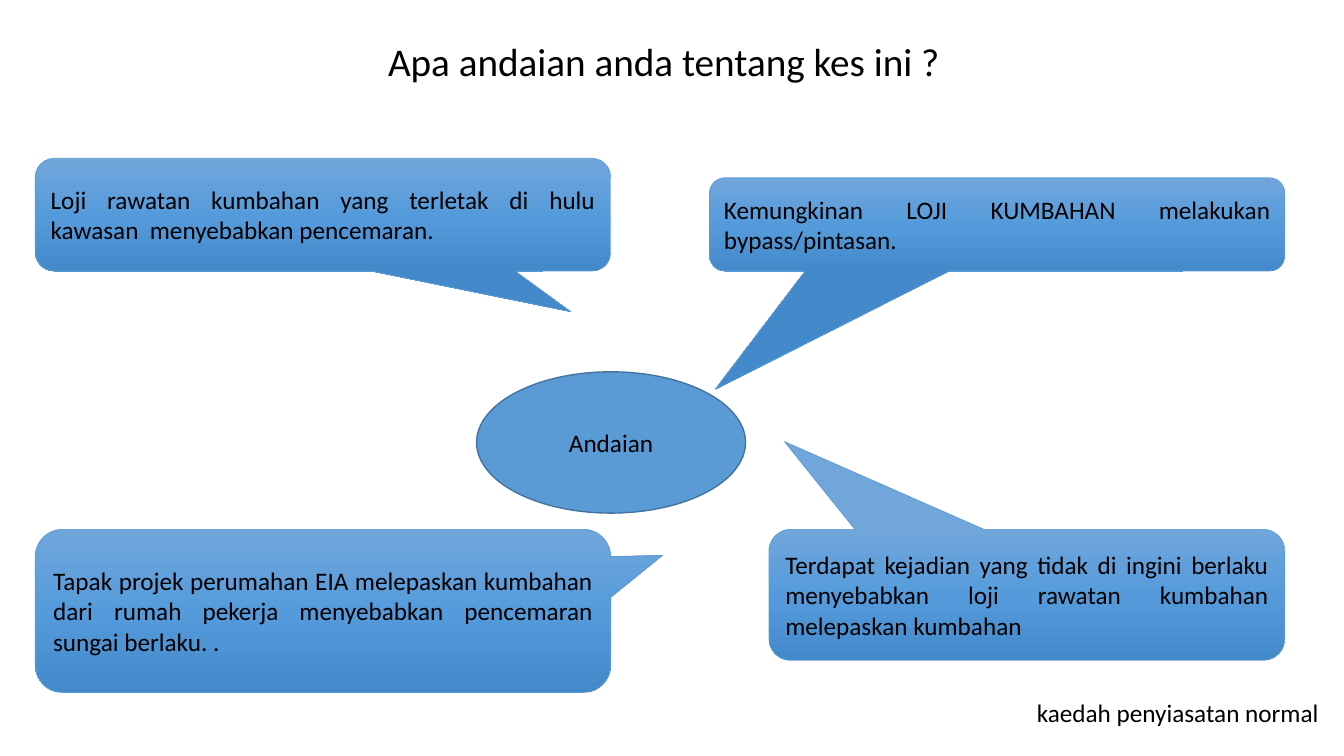
"""Build the slide of assumptions about the pollution case."""
from copy import deepcopy
from dataclasses import dataclass

from pptx import Presentation
from pptx.dml.color import RGBColor
from pptx.enum.shapes import MSO_SHAPE
from pptx.enum.text import MSO_ANCHOR, MSO_AUTO_SIZE, PP_ALIGN
from pptx.oxml.ns import qn
from pptx.shapes.autoshape import Shape
from pptx.slide import Slide
from pptx.util import Cm, Pt

CALLOUT = MSO_SHAPE.ROUNDED_RECTANGULAR_CALLOUT
OVAL = MSO_SHAPE.OVAL
MIDDLE = MSO_ANCHOR.MIDDLE
FIT_SHAPE = MSO_AUTO_SIZE.SHAPE_TO_FIT_TEXT
LEFT, CENTER, JUSTIFY = PP_ALIGN.LEFT, PP_ALIGN.CENTER, PP_ALIGN.JUSTIFY


@dataclass(frozen=True)
class Theme:
    """Colours and type sizes of the slide."""

    font: str = "Calibri"
    ink: str = "000000"
    accent: str = "5B9BD5"
    oval_edge: str = "43739E"
    gradient: tuple[tuple[float, str], ...] = (
        (0, "71A6DB"), (0.5, "559BDB"), (1, "448ACA"))
    title_size: float = 28
    body_size: float = 18


@dataclass(frozen=True)
class Box:
    """Place and size in centimetres."""

    left: float
    top: float
    width: float
    height: float

    def lengths(self) -> tuple[Cm, Cm, Cm, Cm]:
        """Return the four lengths in the order that shapes take them."""
        return Cm(self.left), Cm(self.top), Cm(self.width), Cm(self.height)


@dataclass(frozen=True)
class Assumption:
    """A callout with the offset of its tip from its centre."""

    text: str
    box: Box
    tip: tuple[float, float]


THEME = Theme()
LEFT_EDGE, RIGHT_EDGE, LOWER_TOP, WIDE = 0.89, 32.38, 13.34, 14.5
ASSUMPTIONS = (
    Assumption("Loji rawatan kumbahan yang terletak di hulu kawasan  menyebabkan pencemaran.",
               Box(LEFT_EDGE, 3.99, WIDE, 2.84), (0.43, 0.86)),
    Assumption("Tapak projek perumahan EIA melepaskan kumbahan dari rumah pekerja "
               "menyebabkan pencemaran sungai berlaku. .",
               Box(LEFT_EDGE, LOWER_TOP, WIDE, 4.11), (0.59, -0.34)),
    Assumption("Kemungkinan LOJI KUMBAHAN melakukan bypass/pintasan.",
               Box(RIGHT_EDGE - WIDE, 4.48, WIDE, 2.35), (-0.49, 1.77)),
    Assumption("Terdapat kejadian yang tidak di ingini berlaku menyebabkan loji "
               "rawatan kumbahan melepaskan kumbahan",
               Box(RIGHT_EDGE - 13, LOWER_TOP, 13, 3.3), (-0.47, -1.17)),
)


def write(shape: Shape, text: str, align: PP_ALIGN, size: float = THEME.body_size) -> None:
    """Put one formatted paragraph in a shape."""
    shape.text_frame.text = text
    paragraph = shape.text_frame.paragraphs[0]
    paragraph.alignment = align
    font = paragraph.runs[0].font
    font.name, font.size = THEME.font, Pt(size)
    font.color.rgb = RGBColor.from_string(THEME.ink)


def add_outlined(slide: Slide, kind: MSO_SHAPE, box: Box, edge: str, weight: float) -> Shape:
    """Add a preset shape with an outline, no shadow and centred wrapping text."""
    shape = slide.shapes.add_shape(kind, *box.lengths())
    shape.shadow.inherit = False
    shape.line.color.rgb = RGBColor.from_string(edge)
    shape.line.width = Pt(weight)
    shape.text_frame.word_wrap = True
    shape.text_frame.vertical_anchor = MIDDLE
    return shape


def fill_gradient(shape: Shape) -> None:
    """Fill a shape from top to bottom with the theme gradient."""
    shape.fill.gradient()
    shape.fill.gradient_angle = 270
    stop_list = shape.fill._xPr.find(qn("a:gradFill")).find(qn("a:gsLst"))
    stop_list.insert(1, deepcopy(stop_list[0]))
    for stop, (position, colour) in zip(shape.fill.gradient_stops, THEME.gradient):
        stop.position = position
        stop.color.rgb = RGBColor.from_string(colour)


def add_assumption(slide: Slide, assumption: Assumption) -> None:
    """Add one callout."""
    callout = add_outlined(slide, CALLOUT, assumption.box, THEME.accent, 0.5)
    callout.adjustments[0], callout.adjustments[1] = assumption.tip
    fill_gradient(callout)
    write(callout, assumption.text, JUSTIFY)


def main() -> None:
    """Draw the slide and save it."""
    deck = Presentation()
    deck.slide_width, deck.slide_height = Cm(33.87), Cm(19.05)
    slide = deck.slides.add_slide(deck.slide_layouts[6])

    title = slide.shapes.add_textbox(*Box(8.76, 0.94, 15.93, 1.37).lengths())
    title.text_frame.word_wrap = True
    write(title, "Apa andaian anda tentang kes ini ?", CENTER, THEME.title_size)
    title.text_frame.paragraphs[0].line_spacing = 0.9

    for assumption in ASSUMPTIONS:
        add_assumption(slide, assumption)

    hub = add_outlined(slide, OVAL, Box(12.01, 9.37, 6.78, 3.56), THEME.oval_edge, 1)
    hub.fill.solid()
    hub.fill.fore_color.rgb = RGBColor.from_string(THEME.accent)
    write(hub, "Andaian", CENTER)

    method = slide.shapes.add_textbox(*Box(25.88, 17.45, 7.7, 1.02).lengths())
    method.text_frame.word_wrap = False
    method.text_frame.auto_size = FIT_SHAPE
    write(method, "kaedah penyiasatan normal", LEFT)

    deck.save("out.pptx")


if __name__ == "__main__":
    main()
